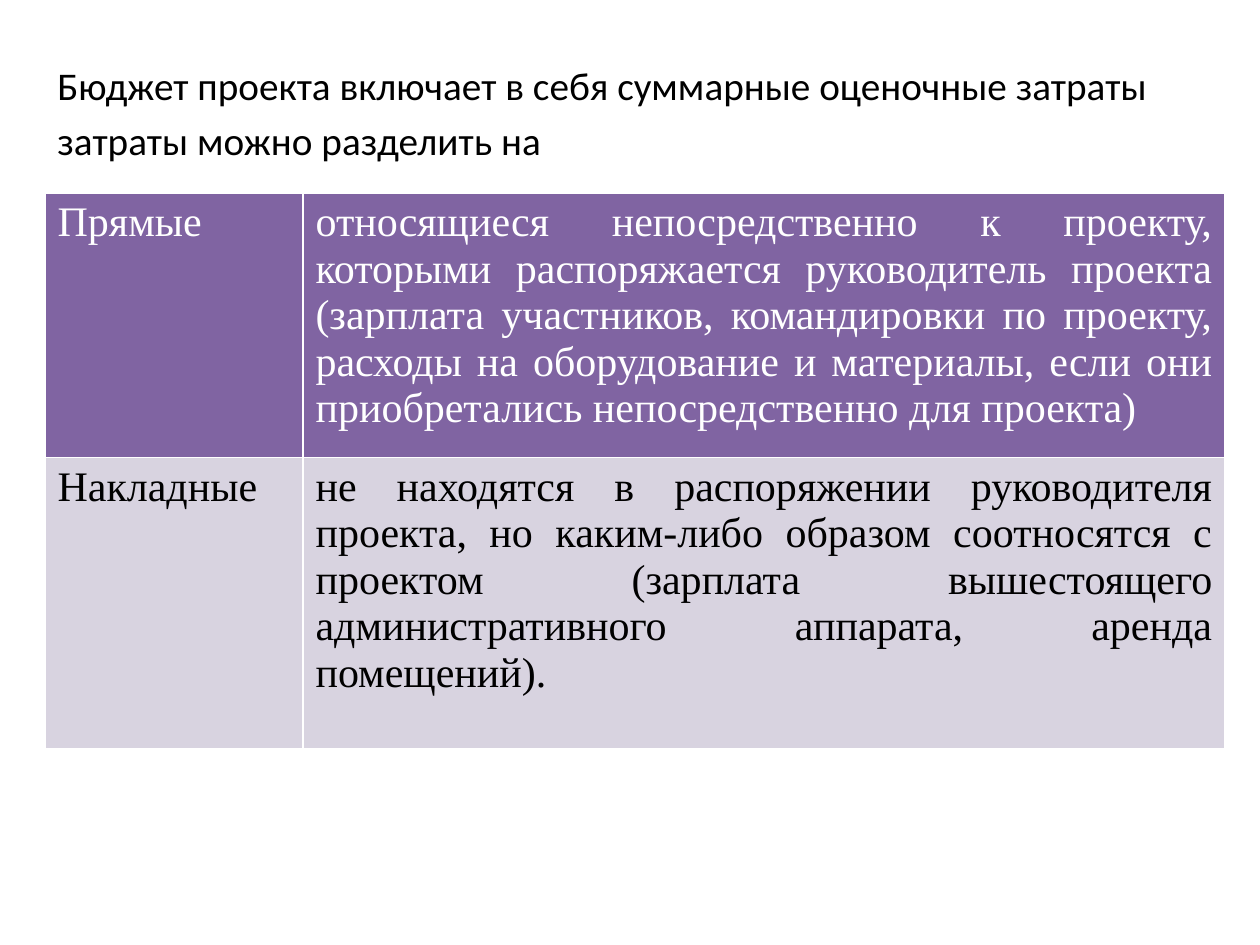
"""Build a slide on project budget costs: an introduction above a two-row table."""
from pptx import Presentation
from pptx.dml.color import RGBColor
from pptx.enum.text import PP_ALIGN as Align
from pptx.util import Pt

PX = 914400 // 126
INTRO = [
    "Бюджет проекта включает в себя суммарные оценочные затраты",
    "затраты можно разделить на",
]
COSTS = [
    {
        "name": "Прямые",
        "detail": "относящиеся непосредственно к проекту, которыми распоряжается "
                  "руководитель проекта (зарплата участников, командировки по проекту, "
                  "расходы на оборудование и материалы, если они приобретались "
                  "непосредственно для проекта)",
        "height": 244, "fill": "8064A2", "color": "FFFFFF",
    },
    {
        "name": "Накладные",
        "detail": "не находятся в распоряжении руководителя проекта, но каким-либо "
                  "образом соотносятся с проектом (зарплата вышестоящего "
                  "административного аппарата, аренда помещений).",
        "height": 291, "fill": "D8D3E0", "color": "000000",
    },
]
COLUMNS = [258, 922]
LEFT, INTRO_TOP, TABLE_TOP = 45, 55, 193


def px(*lengths):
    return [length * PX for length in lengths]


def rgb(value):
    return RGBColor.from_string(value)


def write(para, text, font, size, color="000000", align=Align.LEFT, before=0):
    para.alignment = align
    para.space_before = Pt(before)
    span = para.add_run()
    span.text = text
    span.font.name, span.font.size = font, Pt(size)
    span.font.bold = False
    span.font.color.rgb = rgb(color)


def add_intro(page):
    frame = page.shapes.add_textbox(*px(LEFT, INTRO_TOP, 1134, 110)).text_frame
    frame.word_wrap = True
    for index, line in enumerate(INTRO):
        para = frame.add_paragraph() if index else frame.paragraphs[0]
        write(para, line, "Calibri", 22.4, before=4.5)


def add_costs(page):
    height = sum(cost["height"] for cost in COSTS)
    place = px(LEFT, TABLE_TOP, sum(COLUMNS), height)
    table = page.shapes.add_table(len(COSTS), len(COLUMNS), *place).table
    for column, width in zip(table.columns, px(*COLUMNS)):
        column.width = width
    for row, cost in zip(table.rows, COSTS):
        row.height = cost["height"] * PX
        texts = [(cost["name"], Align.LEFT), (cost["detail"], Align.JUSTIFY)]
        for cell, (text, align) in zip(row.cells, texts):
            cell.fill.solid()
            cell.fill.fore_color.rgb = rgb(cost["fill"])
            write(cell.text_frame.paragraphs[0], text, "Times New Roman", 24,
                  color=cost["color"], align=align)


def main():
    deck = Presentation()
    deck.slide_width, deck.slide_height = px(1260, 945)
    page = deck.slides.add_slide(deck.slide_layouts.get_by_name("Blank"))
    add_intro(page)
    add_costs(page)
    deck.save("out.pptx")


if __name__ == "__main__":
    main()
